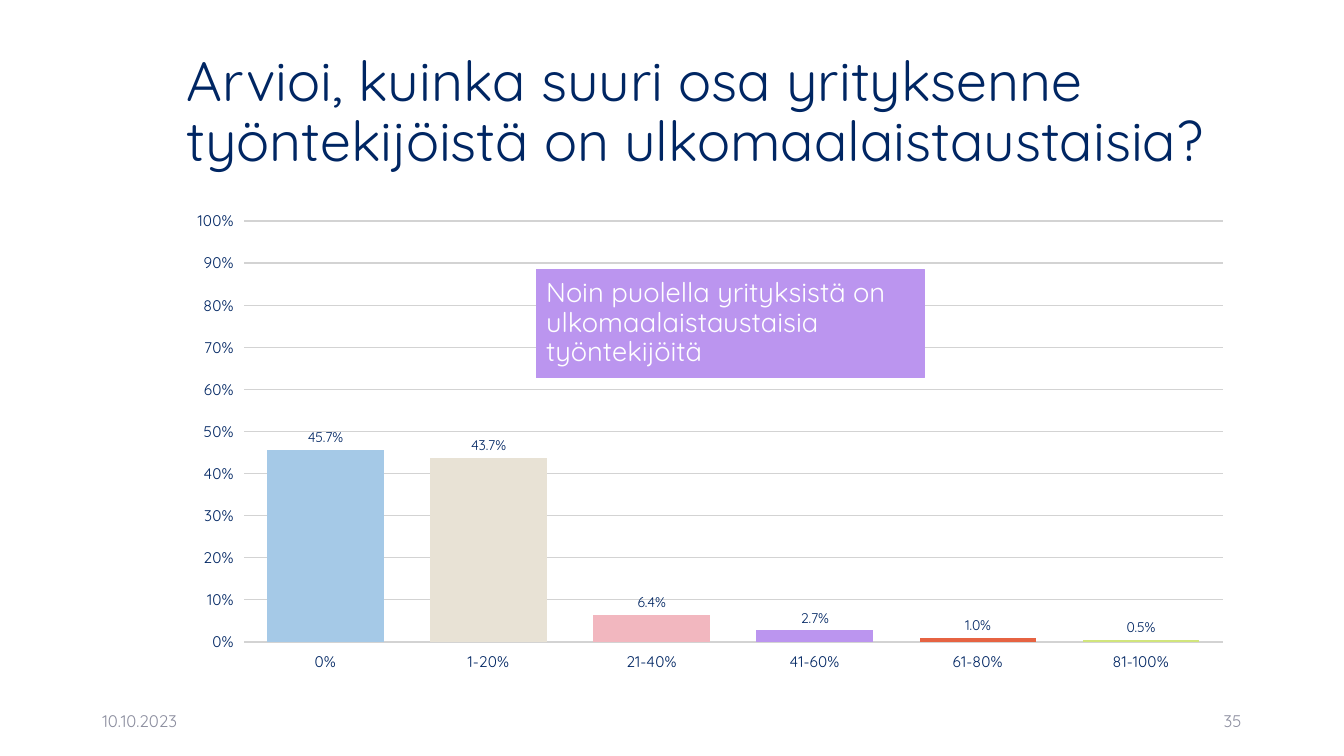
import pptx
import pptx.util
import pptx.chart.data
import pptx.dml.color
import pptx.enum.chart
import pptx.enum.shapes
import pptx.enum.text

Pt = pptx.util.Pt
RGBColor = pptx.dml.color.RGBColor
PP_ALIGN = pptx.enum.text.PP_ALIGN

NAVY = RGBColor(0x00, 0x26, 0x63)
GREY = RGBColor(0x8C, 0x8E, 0x9F)
GRID = RGBColor(0xD3, 0xD3, 0xD3)
WHITE = RGBColor(0xFF, 0xFF, 0xFF)
BLUE = RGBColor(0xA5, 0xC9, 0xE7)
BEIGE = RGBColor(0xE8, 0xE2, 0xD5)
PINK = RGBColor(0xF2, 0xB7, 0xBF)
PURPLE = RGBColor(0xBB, 0x95, 0xEF)
ORANGE = RGBColor(0xE6, 0x63, 0x42)
LIME = RGBColor(0xD1, 0xE5, 0x7C)


class SlideBuilder:
    FONT = "Quicksand"

    def __init__(self, prs):
        # Layout 5 is "Title Only"
        self.s = prs.slides.add_slide(prs.slide_layouts[5])

    def style(self, font, size, color):
        font.name = self.FONT
        font.size = Pt(size)
        font.color.rgb = color

    def add_text(self, sp, text, size, color, align=PP_ALIGN.LEFT, spacing=1.0):
        tf = sp.text_frame
        tf.word_wrap = True
        tf.auto_size = pptx.enum.text.MSO_AUTO_SIZE.NONE
        tf.vertical_anchor = pptx.enum.text.MSO_ANCHOR.MIDDLE
        p = tf.paragraphs[0]
        p.alignment = align
        p.line_spacing = spacing
        r = p.add_run()
        r.text = text
        self.style(r.font, size, color)

    def title(self, text, x, y, w, h):
        sp = self.s.shapes.title
        sp.left, sp.top, sp.width, sp.height = Pt(x), Pt(y), Pt(w), Pt(h)
        self.add_text(sp, text, 39.6, NAVY, spacing=0.9)

    def footer(self, text, x, align):
        sp = self.s.shapes.add_textbox(Pt(x), Pt(500.5), Pt(216), Pt(28.75))
        self.add_text(sp, text, 12, GREY, align)

    def callout(self, text, x, y, w, h):
        sp = self.s.shapes.add_shape(pptx.enum.shapes.MSO_SHAPE.RECTANGLE,
                                     Pt(x), Pt(y), Pt(w), Pt(h))
        sp.shadow.inherit = False
        sp.fill.solid()
        sp.fill.fore_color.rgb = PURPLE
        sp.line.color.rgb = PURPLE
        sp.line.width = Pt(0.75)
        self.add_text(sp, text, 19.5, WHITE, spacing=0.9)

    def column_chart(self, bars, x, y, w, h):
        data = pptx.chart.data.CategoryChartData(number_format="0.0%")
        data.categories = [name for name, _, _ in bars]
        data.add_series("Series 1", [value for _, value, _ in bars])
        chart = self.s.shapes.add_chart(
            pptx.enum.chart.XL_CHART_TYPE.COLUMN_CLUSTERED,
            Pt(x), Pt(y), Pt(w), Pt(h), data).chart
        chart.has_legend = False
        chart.has_title = False
        self.style(chart.font, 11, NAVY)

        # Axes and grid
        for axis in (chart.category_axis, chart.value_axis):
            self.style(axis.tick_labels.font, 11, NAVY)
            axis.format.line.fill.background()
        axis = chart.value_axis
        axis.minimum_scale, axis.maximum_scale, axis.major_unit = 0, 1, 0.1
        axis.tick_labels.number_format = "0%"
        axis.tick_labels.number_format_is_linked = False
        axis.major_gridlines.format.line.color.rgb = GRID
        axis.major_gridlines.format.line.width = Pt(1)

        # Columns and their labels
        plot = chart.plots[0]
        plot.vary_by_categories = False
        plot.gap_width = 40
        plot.overlap = -2
        plot.has_data_labels = True
        labels = plot.data_labels
        labels.show_value = True
        labels.number_format = "0.0%"
        labels.number_format_is_linked = False
        labels.position = pptx.enum.chart.XL_LABEL_POSITION.OUTSIDE_END
        self.style(labels.font, 10, NAVY)
        for i, (_, _, color) in enumerate(bars):
            fill = plot.series[0].points[i].format.fill
            fill.solid()
            fill.fore_color.rgb = color


def main():
    prs = pptx.Presentation()
    prs.slide_width, prs.slide_height = Pt(960), Pt(540)
    slide = SlideBuilder(prs)

    # Chart
    slide.column_chart([
        ("0%", 0.457, BLUE),
        ("1-20%", 0.437, BEIGE),
        ("21-40%", 0.064, PINK),
        ("41-60%", 0.027, PURPLE),
        ("61-80%", 0.010, ORANGE),
        ("81-100%", 0.005, LIME),
    ], 126, 144, 762.5, 342.7)

    # Title
    slide.title("Arvioi, kuinka suuri osa yrityksenne työntekijöistä on "
                "ulkomaalaistaustaisia?", 126, 28.8, 818.6, 104.4)

    # Date and slide number
    slide.footer("10.10.2023", 66, PP_ALIGN.LEFT)
    slide.footer("35", 678, PP_ALIGN.RIGHT)

    # Finding
    slide.callout("Noin puolella yrityksistä on ulkomaalaistaustaisia "
                  "työntekijöitä", 383, 192.2, 277.2, 77.8)

    prs.save("out.pptx")


if __name__ == "__main__":
    main()
